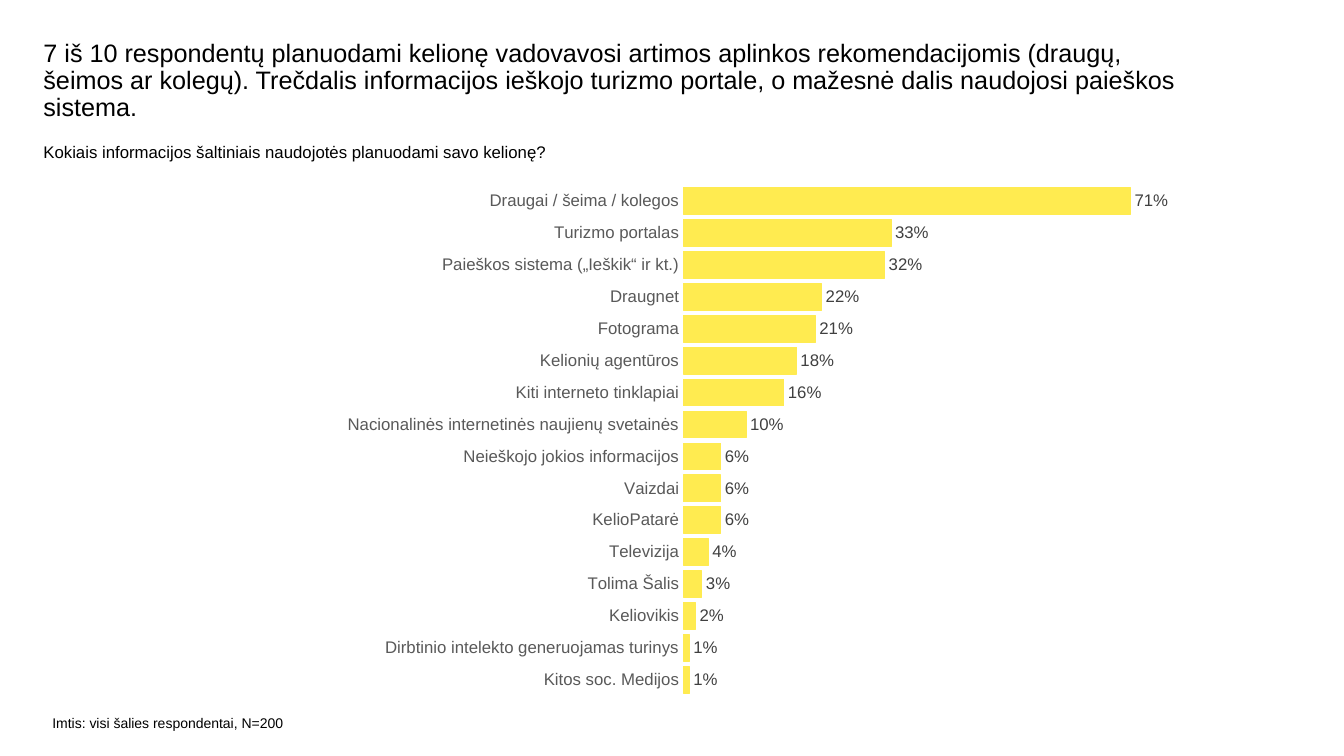
from dataclasses import dataclass

from lxml import etree
from pptx import Presentation
from pptx import util as u
from pptx.chart.data import CategoryChartData
from pptx.dml.color import RGBColor
from pptx.enum import chart as ch, text
from pptx.oxml.ns import qn


@dataclass(frozen=True)
class Theme:
    font: str = "Arial"
    ink: RGBColor = RGBColor(0, 0, 0)
    axis_text: RGBColor = RGBColor(0x59, 0x59, 0x59)
    value_text: RGBColor = RGBColor(0x40, 0x40, 0x40)
    bar: RGBColor = RGBColor(0xFF, 0xEB, 0x50)
    axis_line: RGBColor = RGBColor(0xFF, 0xFF, 0xFF)
    title_size: int = 18
    body_size: int = 12
    note_size: int = 10


@dataclass(frozen=True)
class Box:
    left: float
    top: float
    width: float
    height: float

    def emu(self) -> tuple:
        return tuple(u.Pt(side) for side in (self.left, self.top, self.width, self.height))


@dataclass(frozen=True)
class Caption:
    wording: str
    box: Box
    size: int


@dataclass(frozen=True)
class Source:
    label: str
    share: float


THEME = Theme()

HEADLINE = Caption(
    "7 iš 10 respondentų planuodami kelionę vadovavosi artimos aplinkos rekomendacijomis "
    "(draugų, šeimos ar kolegų). Trečdalis informacijos ieškojo turizmo portale, "
    "o mažesnė dalis naudojosi paieškos sistema.",
    Box(31, 28.8, 810, 43.2), THEME.title_size)

CAPTIONS = (
    Caption("Kokiais informacijos šaltiniais naudojotės planuodami savo kelionę?",
            Box(31, 101.5, 856, 44), THEME.body_size),
    Caption("Imtis: visi šalies respondentai, N=200",
            Box(37.4, 510.5, 182, 17.3), THEME.note_size),
)

CHART_BOX = Box(143.3, 124.6, 704.9, 385.9)
PLOT_AREA = {"x": 0.489, "y": 0.02, "w": 0.511, "h": 0.945}

SOURCES = (
    Source("Draugai / šeima / kolegos", 0.71),
    Source("Turizmo portalas", 0.33),
    Source("Paieškos sistema („Ieškik“ ir kt.)", 0.32),
    Source("Draugnet", 0.22),
    Source("Fotograma", 0.21),
    Source("Kelionių agentūros", 0.18),
    Source("Kiti interneto tinklapiai", 0.16),
    Source("Nacionalinės internetinės naujienų svetainės", 0.10),
    Source("Neieškojo jokios informacijos", 0.06),
    Source("Vaizdai", 0.06),
    Source("KelioPatarė", 0.06),
    Source("Televizija", 0.04),
    Source("Tolima Šalis", 0.03),
    Source("Keliovikis", 0.02),
    Source("Dirbtinio intelekto generuojamas turinys", 0.01),
    Source("Kitos soc. Medijos", 0.01),
)


def style_font(font, size: int, color: RGBColor) -> None:
    font.name = THEME.font
    font.size = u.Pt(size)
    font.color.rgb = color


def write_caption(holder, caption: Caption) -> None:
    holder.left, holder.top, holder.width, holder.height = caption.box.emu()
    frame = holder.text_frame
    frame.text = caption.wording
    frame.word_wrap = True
    frame.auto_size = text.MSO_AUTO_SIZE.NONE
    frame.vertical_anchor = text.MSO_ANCHOR.TOP
    frame.margin_left = frame.margin_right = frame.margin_top = frame.margin_bottom = 0
    paragraph = frame.paragraphs[0]
    paragraph.alignment = text.PP_ALIGN.LEFT
    style_font(paragraph.runs[0].font, caption.size, THEME.ink)


def fix_plot_area(chart) -> None:
    plot_area = chart.element.find(".//" + qn("c:plotArea"))
    for previous in plot_area.findall(qn("c:layout")):
        plot_area.remove(previous)
    layout = etree.Element(qn("c:layout"))
    manual = etree.SubElement(layout, qn("c:manualLayout"))
    settings = {"layoutTarget": "inner", "xMode": "edge", "yMode": "edge", **PLOT_AREA}
    for tag, setting in settings.items():
        etree.SubElement(manual, qn(f"c:{tag}")).set("val", str(setting))
    plot_area.insert(0, layout)


def draw_sources(slide) -> None:
    rising = SOURCES[::-1]
    shares = CategoryChartData(number_format="0%")
    shares.categories = [source.label for source in rising]
    shares.add_series("Series 1", [source.share for source in rising])
    chart = slide.shapes.add_chart(
        ch.XL_CHART_TYPE.BAR_CLUSTERED, *CHART_BOX.emu(), shares).chart
    chart.has_legend = False
    chart.has_title = False
    style_font(chart.font, THEME.note_size, THEME.ink)

    source_axis = chart.category_axis
    source_axis.major_tick_mark = ch.XL_TICK_MARK.NONE
    source_axis.minor_tick_mark = ch.XL_TICK_MARK.NONE
    source_axis.has_major_gridlines = False
    source_axis.format.line.color.rgb = THEME.axis_line
    source_axis.format.line.width = u.Pt(0.75)
    style_font(source_axis.tick_labels.font, THEME.body_size, THEME.axis_text)

    share_axis = chart.value_axis
    share_axis.minimum_scale, share_axis.maximum_scale = 0, 0.8
    share_axis.has_major_gridlines = False
    share_axis.tick_labels.number_format = "0%"
    share_axis.tick_labels.number_format_is_linked = False
    share_axis.visible = False

    plot = chart.plots[0]
    plot.gap_width = 20
    plot.vary_by_categories = False
    bars = plot.series[0]
    bars.format.fill.solid()
    bars.format.fill.fore_color.rgb = THEME.bar
    bars.format.line.color.rgb = THEME.bar
    bars.format.line.width = u.Pt(0.75)
    labels = bars.data_labels
    labels.show_value = True
    labels.number_format = "0%"
    labels.number_format_is_linked = False
    labels.position = ch.XL_LABEL_POSITION.OUTSIDE_END
    style_font(labels.font, THEME.body_size, THEME.value_text)
    fix_plot_area(chart)


def main() -> None:
    deck = Presentation()
    deck.slide_width, deck.slide_height = u.Pt(960), u.Pt(540)
    slide = deck.slides.add_slide(deck.slide_layouts[5])
    headline = slide.shapes.title
    write_caption(headline, HEADLINE)
    headline.text_frame.paragraphs[0].line_spacing = 0.9
    for caption in CAPTIONS:
        write_caption(slide.shapes.add_textbox(*caption.box.emu()), caption)
    draw_sources(slide)
    deck.save("out.pptx")


if __name__ == "__main__":
    main()
